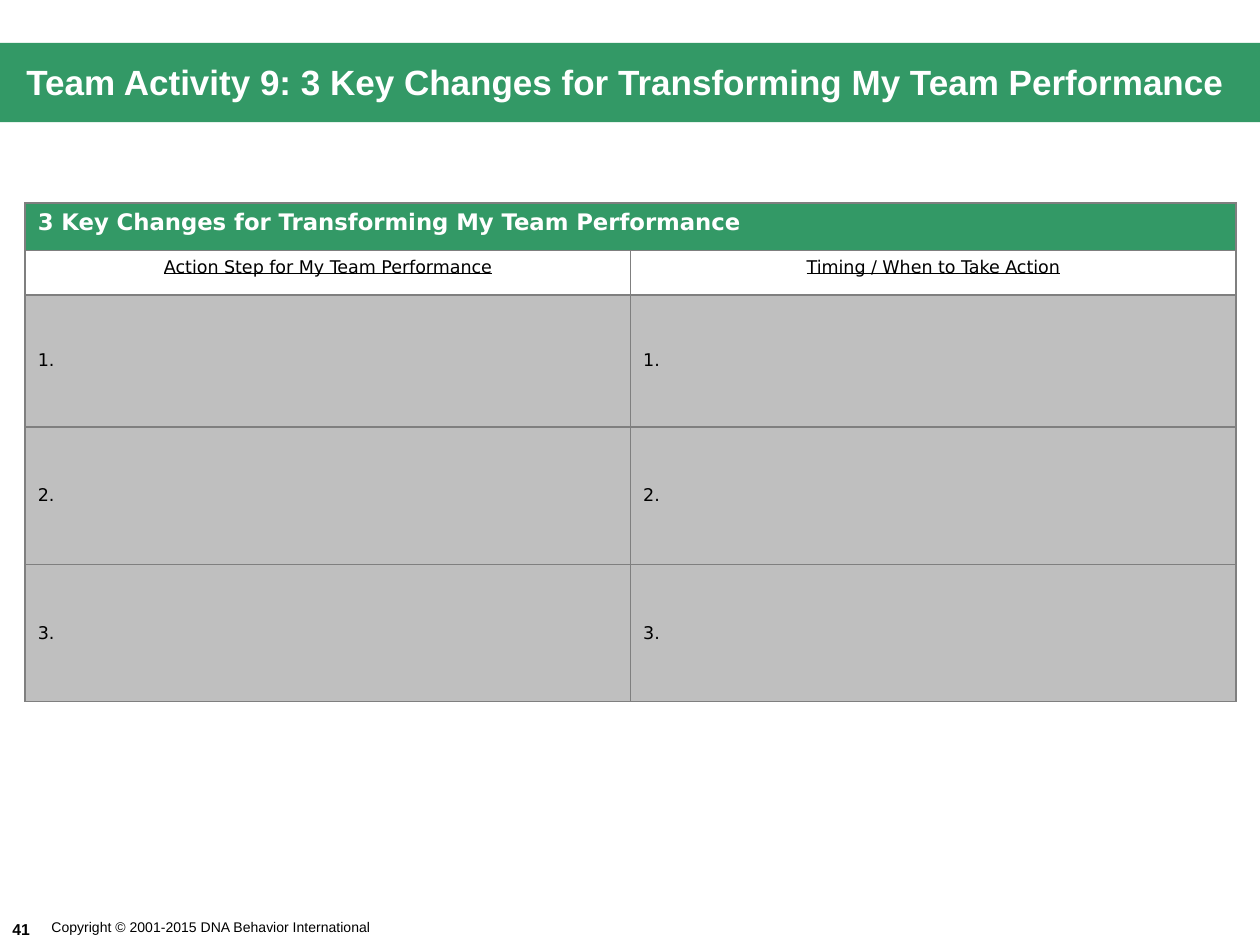
from lxml.etree import SubElement
from pptx import Presentation
from pptx.dml.color import RGBColor
from pptx.enum.shapes import MSO_SHAPE
from pptx.enum.text import MSO_ANCHOR, MSO_AUTO_SIZE, PP_ALIGN
from pptx.oxml.ns import qn
from pptx.util import Inches, Pt

COLORS = {"green": "339966", "gray": "BFBFBF", "border": "7F7F7F",
          "white": "FFFFFF", "black": "000000"}
COLUMNS, ROWS = 100, 75
TITLE_ONLY = 5


class SlideBuilder:
    heading_font = "Arial"
    table_font = "DejaVu Sans"

    def __init__(self, presentation):
        self.column = presentation.slide_width / COLUMNS
        self.row = presentation.slide_height / ROWS
        self.slide = presentation.slides.add_slide(presentation.slide_layouts[TITLE_ONLY])

    def color(self, name):
        return RGBColor.from_string(COLORS[name])

    def place(self, left, top, width, height):
        return (round(left * self.column), round(top * self.row),
                round(width * self.column), round(height * self.row))

    def format(self, paragraph, size, color, bold=False, underline=False,
               name=heading_font, align=PP_ALIGN.LEFT):
        paragraph.alignment = align
        font = paragraph.font
        font.name, font.size = name, Pt(size)
        font.bold, font.underline = bold, underline
        font.color.rgb = self.color(color)

    def band(self, *box):
        shape = self.slide.shapes.add_shape(MSO_SHAPE.RECTANGLE, *self.place(*box))
        shape.shadow.inherit = False
        shape.fill.solid()
        shape.fill.fore_color.rgb = self.color("green")
        shape.line.fill.background()
        self.slide.shapes.title._element.addprevious(shape._element)

    def title(self, text, indent, *box):
        shape = self.slide.shapes.title
        shape.left, shape.top, shape.width, shape.height = self.place(*box)
        frame = shape.text_frame
        frame.text = text
        frame.auto_size = MSO_AUTO_SIZE.NONE
        frame.vertical_anchor = MSO_ANCHOR.MIDDLE
        frame.margin_left = round(indent * self.column)
        frame.margin_right = frame.margin_top = frame.margin_bottom = 0
        self.format(frame.paragraphs[0], 20, "white", bold=True)

    def footer(self, text, size, *box, bold=False, wrap=True):
        frame = self.slide.shapes.add_textbox(*self.place(*box)).text_frame
        frame.text = text
        frame.word_wrap = wrap
        frame.vertical_anchor = MSO_ANCHOR.MIDDLE
        self.format(frame.paragraphs[0], size, "black", bold=bold)

    def border(self, cell):
        properties = cell._tc.get_or_add_tcPr()
        for side in ("a:lnL", "a:lnR", "a:lnT", "a:lnB"):
            line = SubElement(properties, qn(side), w=str(Pt(1)))
            fill = SubElement(line, qn("a:solidFill"))
            SubElement(fill, qn("a:srgbClr"), val=COLORS["border"])

    def cell(self, cell, text, fill=None, anchor=MSO_ANCHOR.TOP, **style):
        cell.text = text
        cell.vertical_anchor = anchor
        if fill:
            cell.fill.solid()
            cell.fill.fore_color.rgb = self.color(fill)
        else:
            cell.fill.background()
        self.format(cell.text_frame.paragraphs[0], name=self.table_font, **style)

    def action_table(self, heading, labels, row_heights, left, top, width):
        box = self.place(left, top, width, sum(row_heights))
        table = self.slide.shapes.add_table(len(row_heights), len(labels), *box).table
        table.first_row = table.horz_banding = False
        for row, height in zip(table.rows, row_heights):
            row.height = round(height * self.row)
        for cell in table.iter_cells():
            self.border(cell)

        table.cell(0, 0).merge(table.cell(0, len(labels) - 1))
        self.cell(table.cell(0, 0), heading, "green", size=13, color="white", bold=True)
        for column, label in enumerate(labels):
            self.cell(table.cell(1, column), label, size=10, color="black",
                      underline=True, align=PP_ALIGN.CENTER)
            for step in range(1, len(row_heights) - 1):
                self.cell(table.cell(step + 1, column), f"{step}.", "gray",
                          MSO_ANCHOR.MIDDLE, size=10, color="black")


def main():
    presentation = Presentation()
    presentation.slide_width, presentation.slide_height = Inches(10), Inches(7.5)
    builder = SlideBuilder(presentation)
    topic = "3 Key Changes for Transforming My Team Performance"

    builder.band(0, 3.4, COLUMNS, 6.3)
    builder.title(f"Team Activity 9: {topic}", 2.1, 0, 4.1, 98.3, 4.8)
    builder.footer("41", 9, 0, 72.5, 7.1, 2.5, bold=True)
    builder.footer("Copyright © 2001-2015 DNA Behavior International", 8,
                   3.1, 72.4, 27.8, 2.4, wrap=False)
    builder.action_table(
        topic,
        ["Action Step for My Team Performance", "Timing / When to Take Action"],
        [3.8, 3.5, 10.5, 10.9, 10.9], 2, 16.1, 96.1)
    presentation.save("out.pptx")


if __name__ == "__main__":
    main()
